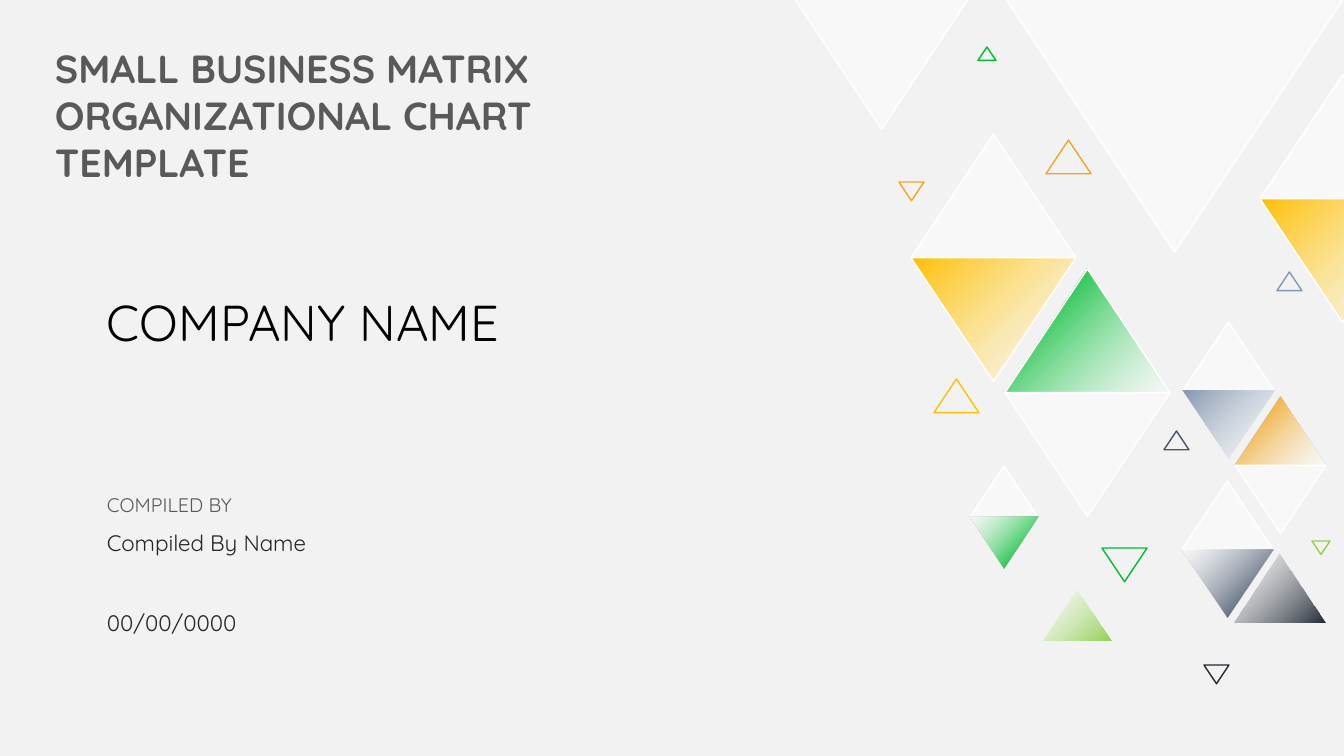
import pptx
import pptx.dml.color
import pptx.enum.shapes
import pptx.enum.text
import pptx.oxml.ns
import pptx.util
from lxml import etree

RGBColor = pptx.dml.color.RGBColor
WHITE = RGBColor(0xFF, 0xFF, 0xFF)
BACKGROUND = RGBColor(0xF2, 0xF2, 0xF2)
BLACK = RGBColor(0x00, 0x00, 0x00)
CHARCOAL = RGBColor(0x26, 0x26, 0x26)
GREY = RGBColor(0x59, 0x59, 0x59)
YELLOW = RGBColor(0xFF, 0xC0, 0x00)
ORANGE = RGBColor(0xF0, 0xA6, 0x22)
GREEN = RGBColor(0x00, 0xBD, 0x32)
LIME = RGBColor(0x92, 0xD0, 0x50)
BLUE = RGBColor(0x84, 0x97, 0xB0)
SLATE = RGBColor(0x44, 0x54, 0x6A)
NIGHT = RGBColor(0x22, 0x2A, 0x35)

SLIDE_WIDTH, SLIDE_HEIGHT = 1344, 756
FRAMED_WIDTH = 165
PALE = ((0, WHITE),)


def px(value):
    """Turn pixels into EMU."""
    return pptx.util.Emu(round(value * 12192000 / SLIDE_WIDTH))


def fading_out(color):
    """Return gradient stops from a colour to white."""
    return (0, color), (1, WHITE)


def fading_in(color):
    """Return gradient stops from white to a colour."""
    return (0, WHITE), (0.82, color)


class CoverBuilder:
    """Hold the cover style and the current slide."""

    font_name = "Quicksand"
    gradient_angle = 135

    def __init__(self, presentation):
        """Add a blank slide with a plain background."""
        self.slide = presentation.slides.add_slide(presentation.slide_layouts[6])
        background = self.slide.background.fill
        background.solid()
        background.fore_color.rgb = BACKGROUND

    def text(self, box, content, color, size, bold=False, space_after=0):
        """Add a wrapped line of text."""
        shape = self.slide.shapes.add_textbox(*map(px, box))
        frame = shape.text_frame
        frame.word_wrap = True
        frame.auto_size = pptx.enum.text.MSO_AUTO_SIZE.SHAPE_TO_FIT_TEXT
        paragraph = frame.paragraphs[0]
        paragraph.space_after = pptx.util.Pt(space_after)
        run = paragraph.add_run()
        run.text = content
        formats = {"name": self.font_name, "size": pptx.util.Pt(size), "bold": bold}
        for name, value in formats.items():
            setattr(run.font, name, value)
        run.font.color.rgb = color

    def triangle(self, left, top, width, down=False, stops=None, line=None):
        """Add a triangle three quarters as high as wide."""
        shape = self.slide.shapes.add_shape(
            pptx.enum.shapes.MSO_SHAPE.ISOSCELES_TRIANGLE,
            px(left), px(top), px(width), px(width * 0.75))
        shape.shadow.inherit = False
        shape.rotation = 180 if down else 0
        self.paint(shape, stops)
        if line is None:
            shape.line.fill.background()
        else:
            shape.line.color.rgb = line
            shape.line.width = pptx.util.Pt(1)

    def paint(self, shape, stops):
        """Fill a shape, with every white half transparent."""
        fill = shape.fill
        if stops is None:
            fill.background()
        elif len(stops) == 1:
            fill.solid()
            fill.fore_color.rgb = stops[0][1]
        else:
            fill.gradient()
            fill.gradient_angle = self.gradient_angle
            for stop, (position, color) in zip(fill.gradient_stops, stops):
                stop.position = position
                stop.color.rgb = color
        qualify = pptx.oxml.ns.qn
        for color in shape._element.spPr.iter(qualify("a:srgbClr")):
            if color.get("val") == str(WHITE):
                etree.SubElement(color, qualify("a:alpha")).set("val", "50000")

    def filled(self, left, top, width, down, stops):
        """Add a filled triangle, framed when pale or large."""
        framed = stops == PALE or width >= FRAMED_WIDTH
        self.triangle(left, top, width, down, stops, WHITE if framed else None)

    def diamond(self, left, top, width, upper, lower):
        """Add two filled triangles that share a base."""
        self.filled(left, top, width, False, upper)
        self.filled(left, top + width * 0.75, width, True, lower)


DIAMONDS = (
    (911, 134, 165, PALE, fading_out(YELLOW)),
    (1005, 269, 165, fading_in(GREEN), PALE),
    (1182, 481, 91, PALE, fading_in(SLATE)),
    (1183, 322, 91, PALE, fading_out(BLUE)),
    (1235, 397, 91, fading_in(ORANGE), PALE),
    (970, 466, 68, PALE, fading_in(GREEN)),
    (1260, 75, 165, PALE, fading_out(YELLOW)),
)
SINGLES = (
    (1005, -2, 339, True, PALE),
    (794, -2, 175, True, PALE),
    (1234, 554, 91, False, fading_out(NIGHT)),
    (1043, 590, 68, False, fading_out(LIME)),
)
OUTLINES = (
    (1102, 548, 45, True, GREEN),
    (934, 379, 45, False, YELLOW),
    (1164, 431, 25, False, SLATE),
    (1204, 665, 25, True, NIGHT),
    (899, 182, 25, True, ORANGE),
    (1277, 272, 25, False, BLUE),
    (978, 47, 18, False, GREEN),
    (1312, 541, 18, True, LIME),
    (1046, 140, 45, False, ORANGE),
)
TEXTS = (
    ((97, 286, 1019, 72), "COMPANY NAME", BLACK, 36),
    ((97, 488, 177, 34), "COMPILED BY", GREY, 14, False, 6),
    ((45, 39, 690, 105), "SMALL BUSINESS MATRIX ORGANIZATIONAL CHART TEMPLATE",
     GREY, 28, True),
    ((97, 524, 437, 37), "Compiled By Name", CHARCOAL, 16, False, 6),
    ((97, 604, 164, 37), "00/00/0000", CHARCOAL, 16, False, 6),
)


def main():
    """Build and save the cover."""
    presentation = pptx.Presentation()
    presentation.slide_width = px(SLIDE_WIDTH)
    presentation.slide_height = px(SLIDE_HEIGHT)
    cover = CoverBuilder(presentation)
    for diamond in DIAMONDS:
        cover.diamond(*diamond)
    for single in SINGLES:
        cover.filled(*single)
    for left, top, width, down, color in OUTLINES:
        cover.triangle(left, top, width, down, line=color)
    for text in TEXTS:
        cover.text(*text)
    presentation.save("out.pptx")


if __name__ == "__main__":
    main()
